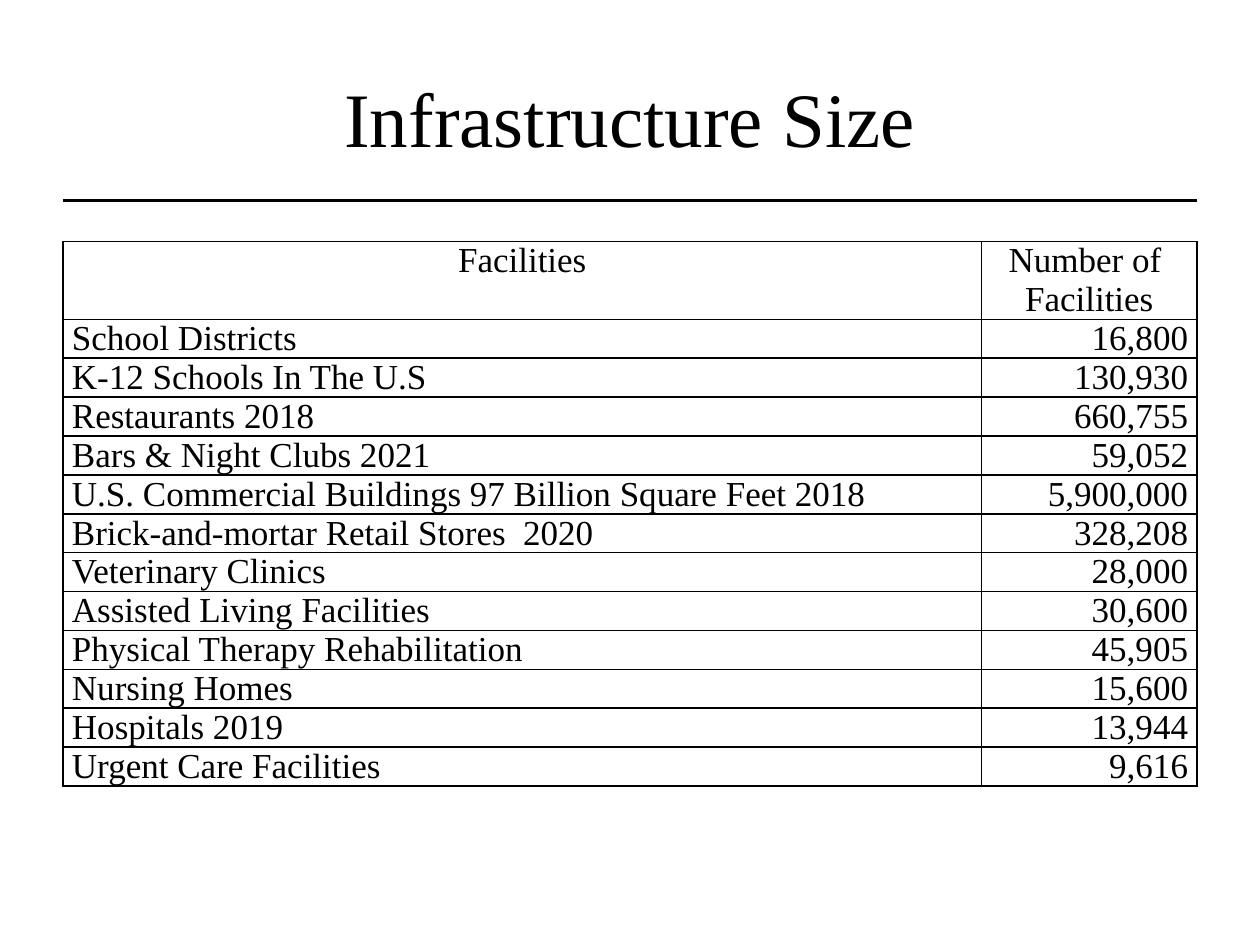
from lxml import etree
from pptx import Presentation
from pptx.dml.color import RGBColor
from pptx.enum.shapes import MSO_CONNECTOR
from pptx.enum.text import MSO_ANCHOR, PP_ALIGN
from pptx.oxml.ns import qn
from pptx.util import Cm, Pt

LEFT, CENTER, RIGHT = PP_ALIGN.LEFT, PP_ALIGN.CENTER, PP_ALIGN.RIGHT
MIDDLE = MSO_ANCHOR.MIDDLE
STRAIGHT = MSO_CONNECTOR.STRAIGHT
TITLE_ONLY = 5
COLORS = {"ink": "000000", "paper": "FFFFFF"}

HEADINGS = [["Facilities"], ["Number of ", "Facilities"]]
FACILITIES = [
    ("School Districts", "16,800"),
    ("K-12 Schools In The U.S", "130,930"),
    ("Restaurants 2018", "660,755"),
    ("Bars & Night Clubs 2021", "59,052"),
    ("U.S. Commercial Buildings 97 Billion Square Feet 2018", "5,900,000"),
    ("Brick-and-mortar Retail Stores  2020", "328,208"),
    ("Veterinary Clinics", "28,000"),
    ("Assisted Living Facilities", "30,600"),
    ("Physical Therapy Rehabilitation", "45,905"),
    ("Nursing Homes", "15,600"),
    ("Hospitals 2019", "13,944"),
    ("Urgent Care Facilities", "9,616"),
]


class SlideBuilder:
    """Holds the style and the current slide, and adds elements to it."""

    font = "Times New Roman"
    title_size = 44
    table_size = 20
    row_height = 0.78

    def __init__(self, slide):
        self.slide = slide
        background = slide.background.fill
        background.solid()
        background.fore_color.rgb = self.color("paper")

    def color(self, name):
        return RGBColor.from_string(COLORS[name])

    def add_lines(self, frame, lines, size, align):
        for index, line in enumerate(lines):
            paragraph = frame.add_paragraph() if index else frame.paragraphs[0]
            paragraph.alignment = align
            run = paragraph.add_run()
            run.text = line
            run.font.name = self.font
            run.font.size = Pt(size)
            run.font.color.rgb = self.color("ink")

    def title(self, text, left, top, width, height):
        heading = self.slide.shapes.title
        heading.left, heading.top = Cm(left), Cm(top)
        heading.width, heading.height = Cm(width), Cm(height)
        heading.text_frame.vertical_anchor = MIDDLE
        self.add_lines(heading.text_frame, [text], self.title_size, CENTER)

    def rule(self, left, top, width):
        divider = self.slide.shapes.add_connector(
            STRAIGHT, Cm(left), Cm(top), Cm(left + width), Cm(top))
        divider.line.color.rgb = self.color("ink")
        divider.line.width = Pt(2)
        etree.SubElement(divider._element.spPr, qn("a:effectLst"))

    def border(self, cell):
        properties = cell._tc.get_or_add_tcPr()
        for position, side in enumerate(("lnL", "lnR", "lnT", "lnB")):
            edge = etree.Element(qn(f"a:{side}"), w=str(Pt(1)))
            fill = etree.SubElement(edge, qn("a:solidFill"))
            etree.SubElement(fill, qn("a:srgbClr"), val=COLORS["ink"])
            properties.insert(position, edge)

    def cell(self, cell, lines, align):
        cell.margin_left = cell.margin_right = Cm(0.18)
        cell.margin_top = cell.margin_bottom = 0
        cell.fill.background()
        self.border(cell)
        self.add_lines(cell.text_frame, lines, self.table_size, align)

    def table(self, headings, records, left, top, widths):
        height = self.row_height * (len(records) + 2)
        table = self.slide.shapes.add_table(
            len(records) + 1, len(widths),
            Cm(left), Cm(top), Cm(sum(widths)), Cm(height)).table
        table.horz_banding = False
        table.first_row = False
        for column, width in zip(table.columns, widths):
            column.width = Cm(width)
        for row in table.rows:
            row.height = Cm(self.row_height)
        table.rows[0].height = Cm(2 * self.row_height)
        for column, lines in enumerate(headings):
            self.cell(table.cell(0, column), lines, CENTER)
        for row, record in enumerate(records, 1):
            for column, (text, align) in enumerate(zip(record, (LEFT, RIGHT))):
                self.cell(table.cell(row, column), [text], align)


def main():
    presentation = Presentation()
    presentation.slide_width, presentation.slide_height = Cm(25.4), Cm(19.05)
    layout = presentation.slide_layouts[TITLE_ONLY]
    builder = SlideBuilder(presentation.slides.add_slide(layout))
    margin, content_width, count_width = 1.27, 22.86, 4.34
    builder.rule(margin, 4.04, content_width)
    builder.title("Infrastructure Size", margin, 0.76, content_width, 3.18)
    builder.table(HEADINGS, FACILITIES, margin, 4.87,
                  (content_width - count_width, count_width))
    presentation.save("out.pptx")


if __name__ == "__main__":
    main()
